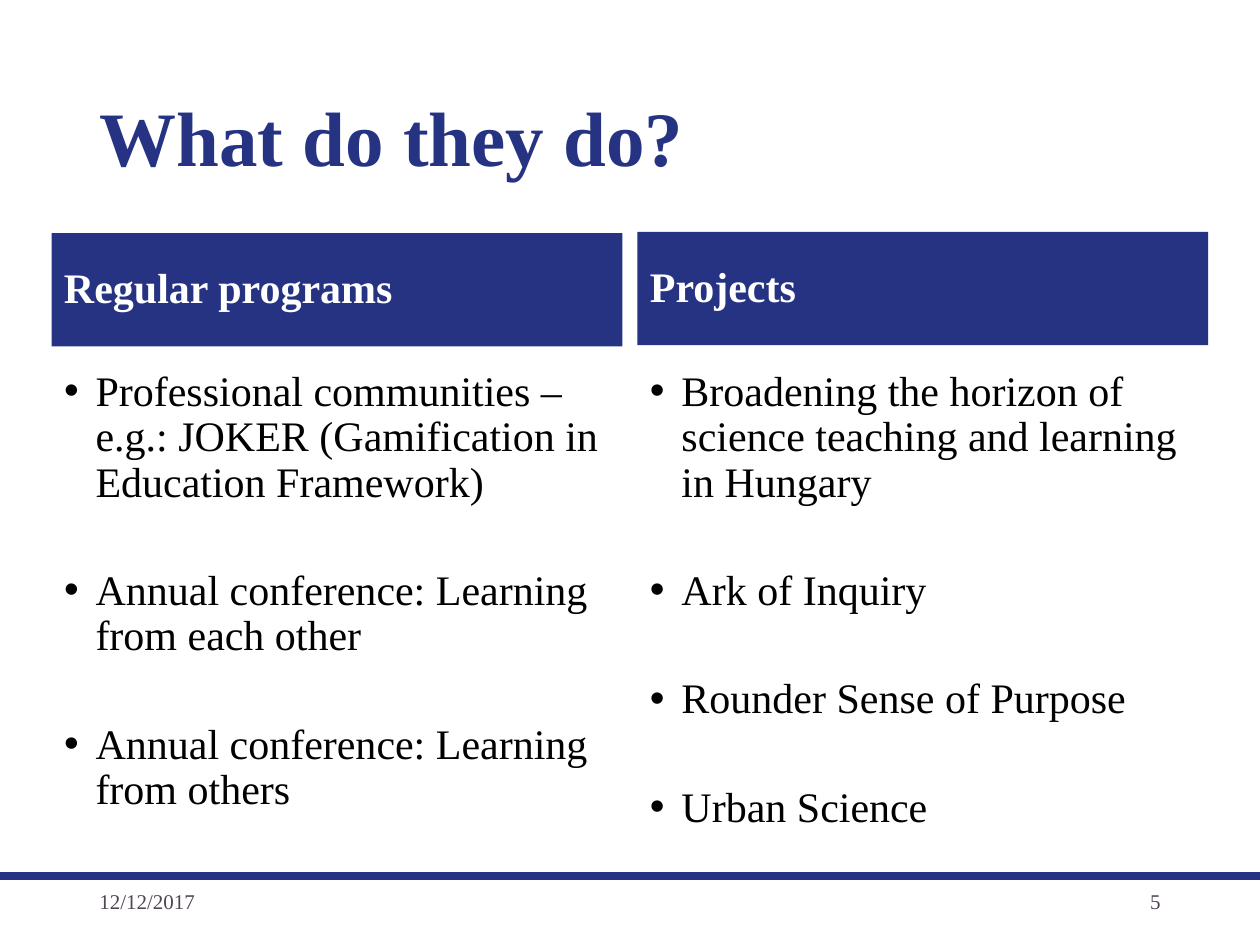
from lxml import etree
from pptx import Presentation
from pptx.dml.color import RGBColor
from pptx.enum import shapes, text
from pptx.oxml.ns import qn
from pptx.util import Inches, Pt

COLORS = {"navy": "263383", "white": "FFFFFF", "black": "000000", "gray": "504652"}
FONT = "Times New Roman"

# Content: (left, header top, header, items)
TITLE = "What do they do?"
COLUMNS = [
    (0.41, 1.85, "Regular programs", [
        "Professional communities – e.g.: JOKER (Gamification in Education Framework)",
        "Annual conference: Learning from each other",
        "Annual conference: Learning from others",
    ]),
    (5.06, 1.84, "Projects", [
        "Broadening the horizon of science teaching and learning in Hungary",
        "Ark of Inquiry",
        "Rounder Sense of Purpose",
        "Urban Science",
    ]),
]
FOOTER = [
    (0.69, "12/12/2017", text.PP_ALIGN.LEFT),
    (7.06, "5", text.PP_ALIGN.RIGHT),
]

# Text formats
STYLES = {
    "title": {"size": Pt(44), "bold": True, "color": "navy"},
    "header": {"size": Pt(24), "bold": True, "color": "white"},
    "item": {"size": Pt(24), "bold": False, "color": "black"},
    "footer": {"size": Pt(12), "bold": False, "color": "gray"},
}


def rgb(name):
    return RGBColor.from_string(COLORS[name])


def add_bullet(paragraph):
    properties = paragraph._p.get_or_add_pPr()
    properties.set("marL", str(Inches(0.25)))
    properties.set("indent", str(Inches(-0.25)))
    font = etree.SubElement(properties, qn("a:buFont"))
    font.set("typeface", "Arial")
    etree.SubElement(properties, qn("a:buChar")).set("char", "•")


def write(box, lines, style, align=text.PP_ALIGN.LEFT, spacing=0.9,
          anchor=text.MSO_ANCHOR.MIDDLE, bullets=False):
    frame = box.text_frame
    frame.word_wrap = True
    frame.vertical_anchor = anchor
    for index, line in enumerate(lines):
        paragraph = frame.add_paragraph() if index else frame.paragraphs[0]
        if bullets:
            add_bullet(paragraph)
            paragraph.space_before = Pt(18 if index else 0)
            paragraph.space_after = Pt(18)
        paragraph.alignment = align
        paragraph.line_spacing = spacing
        span = paragraph.add_run()
        span.text = line
        span.font.name = FONT
        for key, value in STYLES[style].items():
            if key == "color":
                span.font.color.rgb = rgb(value)
            else:
                setattr(span.font, key, value)


def add_text(page, place, lines, style, **options):
    box = page.shapes.add_textbox(*map(Inches, place))
    write(box, lines, style, **options)


def main():
    deck = Presentation()
    deck.slide_width, deck.slide_height = Inches(10), Inches(7.5)
    page = deck.slides.add_slide(deck.slide_layouts[6])

    # Footer rule
    rule = page.shapes.add_connector(
        shapes.MSO_CONNECTOR.STRAIGHT, *map(Inches, (0, 6.95, 10, 6.95)))
    rule.line.color.rgb = rgb("navy")
    rule.line.width = Pt(4.5)
    etree.SubElement(rule._element.spPr, qn("a:effectLst"))

    # Title
    add_text(page, (0.69, 0.4, 8.62, 1.45), [TITLE], "title")

    # Two columns: header bar above a bulleted list
    for left, top, header, items in COLUMNS:
        bar = page.shapes.add_shape(
            shapes.MSO_SHAPE.RECTANGLE, *map(Inches, (left, top, 4.53, 0.9)))
        bar.shadow.inherit = False
        bar.fill.solid()
        bar.fill.fore_color.rgb = rgb("navy")
        bar.line.fill.background()
        write(bar, [header], "header")
        add_text(page, (left, 2.89, 4.52, 4.03), items, "item",
                 anchor=text.MSO_ANCHOR.TOP, bullets=True)

    # Date and page number
    for left, label, align in FOOTER:
        add_text(page, (left, 6.95, 2.25, 0.4), [label], "footer",
                 align=align, spacing=1.0)

    deck.save("out.pptx")


if __name__ == "__main__":
    main()
